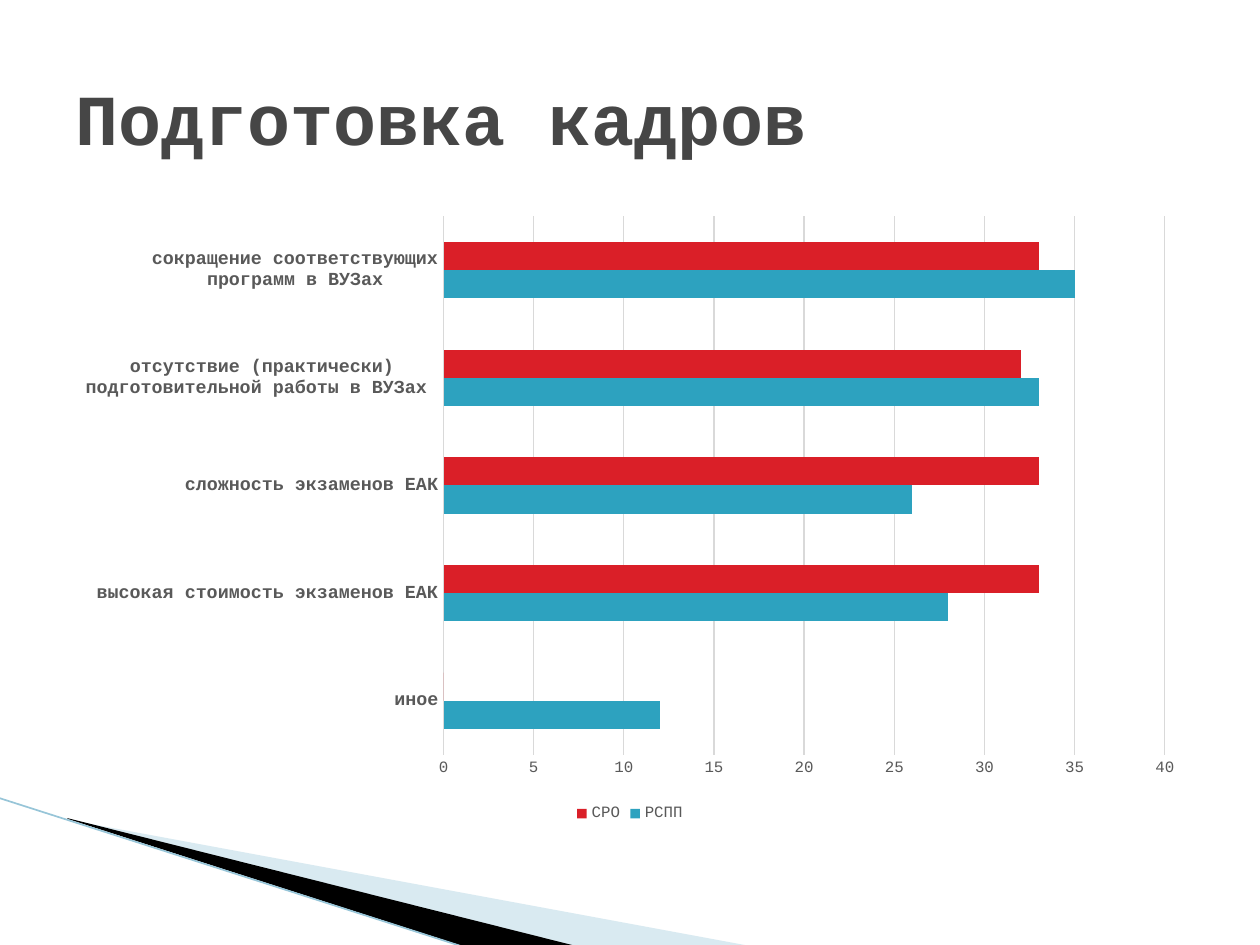
from lxml.etree import SubElement
from pptx import Presentation
from pptx.chart.data import CategoryChartData
from pptx.dml.color import RGBColor
from pptx.enum.chart import XL_CHART_TYPE, XL_LEGEND_POSITION, XL_TICK_MARK
from pptx.enum.shapes import MSO_CONNECTOR
from pptx.enum.text import MSO_ANCHOR
from pptx.oxml.ns import qn
from pptx.util import Pt

SCALE = 914400 / 126  # EMU per px
FONT = "Courier New"

WHITE = RGBColor(0xFF, 0xFF, 0xFF)
BLACK = RGBColor(0x00, 0x00, 0x00)
TITLE_GREY = RGBColor(0x46, 0x46, 0x46)
LABEL_GREY = RGBColor(0x59, 0x59, 0x59)
GRID_GREY = RGBColor(0xD9, 0xD9, 0xD9)
PALE_BLUE = RGBColor(0xA0, 0xCB, 0xDC)
EDGE_BLUE = RGBColor(0x97, 0xC5, 0xD8)
TEAL = RGBColor(0x2D, 0xA2, 0xBF)
RED = RGBColor(0xDA, 0x1F, 0x28)

CATEGORIES = [
    "иное",
    "высокая стоимость экзаменов ЕАК",
    "сложность экзаменов ЕАК",
    "отсутствие (практически) подготовительной работы в ВУЗах ",
    "сокращение соответствующих программ в ВУЗах",
]
SERIES = [
    ("РСПП", (12, 28, 26, 33, 35), TEAL),
    ("СРО", (0, 33, 33, 32, 33), RED),
]


def px(*lengths):
    return [round(length * SCALE) for length in lengths]


def style_font(font, size, color, bold=False):
    font.name = FONT
    font.size = Pt(size)
    font.bold = bold
    font.color.rgb = color


def style_line(line, color, width):
    line.color.rgb = color
    line.width = Pt(width)


def add_wedge(page, points, color, opacity=100):
    builder = page.shapes.build_freeform(*points[0], scale=SCALE)
    builder.add_line_segments(points[1:], close=True)
    wedge = builder.convert_to_shape()
    wedge.shadow.inherit = False
    wedge.fill.solid()
    wedge.fill.fore_color.rgb = color
    wedge.line.fill.background()
    if opacity < 100:
        tint = wedge.fill._xPr.find(qn("a:solidFill"))[0]
        SubElement(tint, qn("a:alpha")).set("val", str(opacity * 1000))


def add_edge(page, start, end):
    edge = page.shapes.add_connector(MSO_CONNECTOR.STRAIGHT, *px(*start, *end))
    style_line(edge.line, EDGE_BLUE, 0.95)
    SubElement(edge._element.spPr, qn("a:effectLst"))


def add_title(page, text):
    box = page.shapes.add_textbox(*px(63, 38, 1134, 158))
    frame = box.text_frame
    frame.word_wrap = True
    frame.vertical_anchor = MSO_ANCHOR.MIDDLE
    para = frame.paragraphs[0]
    para.text = text
    style_font(para.font, 41, TITLE_GREY, bold=True)


def style_axis(axis, size, bold=False):
    axis.major_tick_mark = axis.minor_tick_mark = XL_TICK_MARK.NONE
    style_font(axis.tick_labels.font, size, LABEL_GREY, bold)


def add_bar_chart(page):
    data = CategoryChartData()
    data.categories = CATEGORIES
    for name, values, _ in SERIES:
        data.add_series(name, values)
    chart = page.shapes.add_chart(
        XL_CHART_TYPE.BAR_CLUSTERED, *px(63, 204, 1134, 624), data
    ).chart
    chart.has_title = False
    style_font(chart.font, 10, BLACK)

    # Bars
    plot = chart.plots[0]
    plot.gap_width = 182
    plot.overlap = 0
    plot.vary_by_categories = False
    for series, (_, _, color) in zip(plot.series, SERIES):
        series.format.fill.solid()
        series.format.fill.fore_color.rgb = color

    # Axes
    style_axis(chart.category_axis, 10.5, bold=True)
    style_line(chart.category_axis.format.line, GRID_GREY, 0.75)
    scale_axis = chart.value_axis
    style_axis(scale_axis, 9)
    scale_axis.minimum_scale, scale_axis.maximum_scale = 0, 40
    scale_axis.major_unit = 5
    scale_axis.format.line.fill.background()
    style_line(scale_axis.major_gridlines.format.line, GRID_GREY, 0.75)

    # Legend
    chart.has_legend = True
    chart.legend.position = XL_LEGEND_POSITION.BOTTOM
    chart.legend.include_in_layout = False
    style_font(chart.legend.font, 9, LABEL_GREY)


def main():
    deck = Presentation()
    deck.slide_width, deck.slide_height = px(1260, 945)
    page = deck.slides.add_slide(deck.slide_layouts[6])
    page.background.fill.solid()
    page.background.fill.fore_color.rgb = WHITE

    # Corner decoration
    add_wedge(page, [(69, 820), (750, 946), (575, 946), (69, 819)], PALE_BLUE, 40)
    add_wedge(page, [(67, 818), (576, 946), (469, 948), (68, 819)], BLACK)
    add_edge(page, (-1, 798), (467, 948))

    # Content
    add_title(page, "Подготовка кадров")
    add_bar_chart(page)
    deck.save("out.pptx")


if __name__ == "__main__":
    main()
